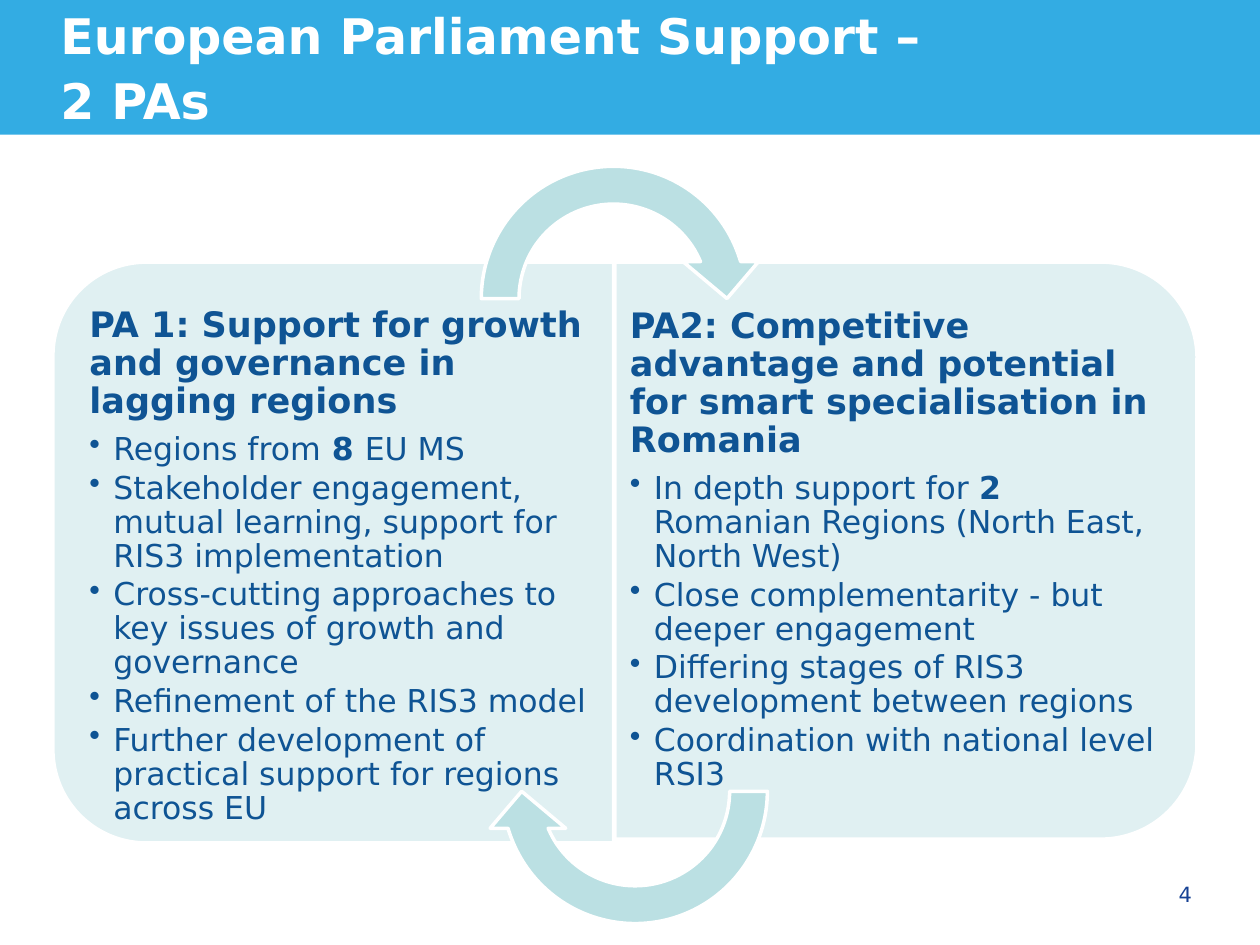
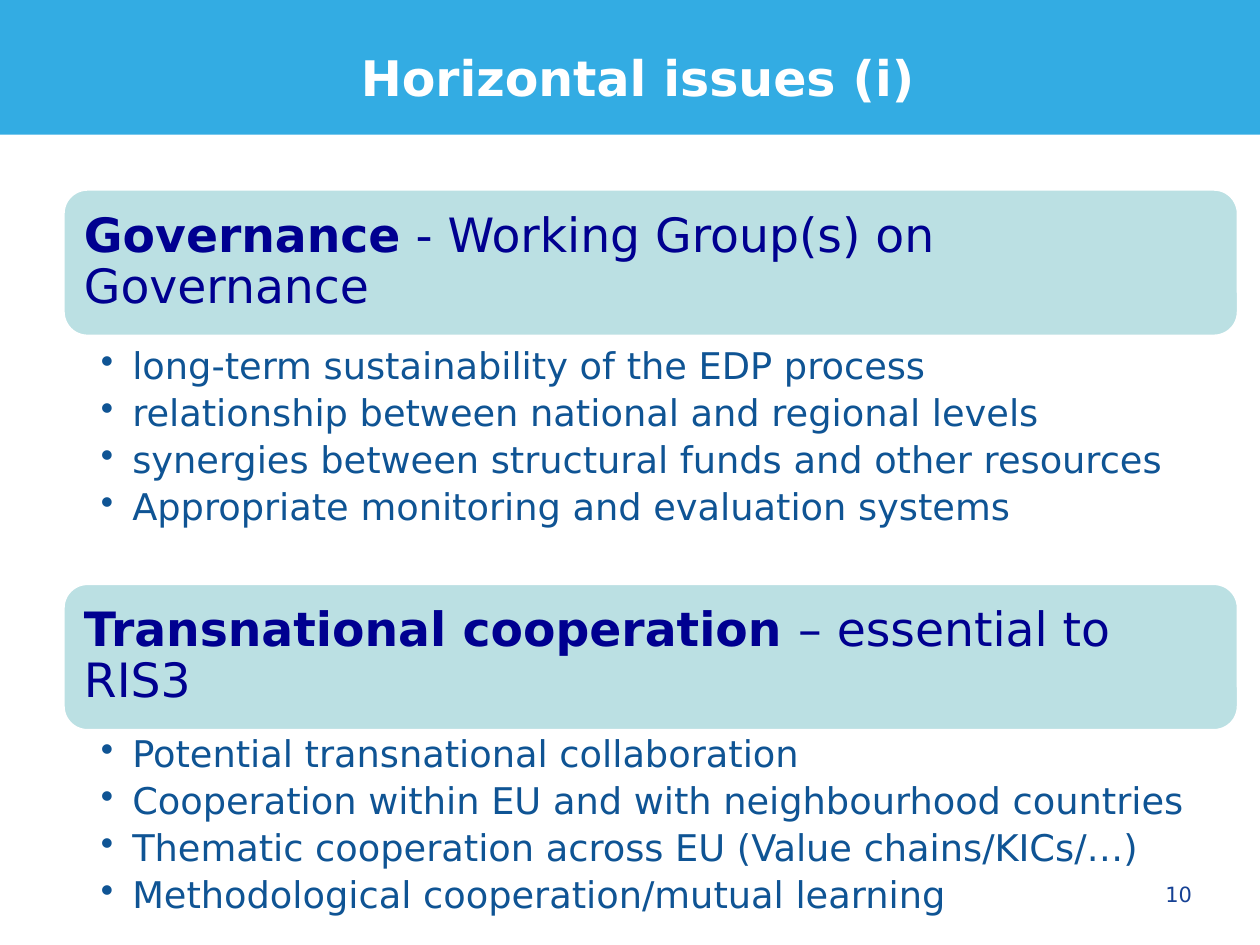
"""Build two slides on regional support priorities and horizontal issues."""
from lxml import etree
from pptx import Presentation
from pptx import util as u
from pptx.dml.color import RGBColor
from pptx.enum import shapes, text
from pptx.oxml import ns

FONT = "DejaVu Sans"
SKY = RGBColor(0x33, 0xAC, 0xE3)
TEAL = RGBColor(0xBB, 0xE0, 0xE3)
PALE = RGBColor(0xE0, 0xF0, 0xF2)
WHITE = RGBColor(0xFF, 0xFF, 0xFF)
BLUE = RGBColor(0x0F, 0x54, 0x94)
NAVY = RGBColor(0x00, 0x00, 0x90)
FOOTER = RGBColor(0x16, 0x41, 0x94)

KIND = shapes.MSO_SHAPE
TOP, MIDDLE = text.MSO_ANCHOR.TOP, text.MSO_ANCHOR.MIDDLE
LEFT, CENTER, RIGHT = text.PP_ALIGN.LEFT, text.PP_ALIGN.CENTER, text.PP_ALIGN.RIGHT


def add_block(page, kind, area, fill, rotation=0):
    """Add a filled shape with a white outline."""
    block = page.shapes.add_shape(kind, *map(u.Inches, area))
    block.shadow.inherit = False
    block.rotation = rotation
    block.fill.solid()
    block.fill.fore_color.rgb = fill
    block.line.color.rgb = WHITE
    block.line.width = u.Pt(2)
    return block


def write(box, lines, insets, color, align=LEFT, anchor=TOP, spacing=0.9):
    """Write (text, size, space after, hanging indent) lines; asterisks enclose bold words."""
    frame = box.text_frame
    frame.word_wrap = True
    frame.auto_size = text.MSO_AUTO_SIZE.NONE
    frame.vertical_anchor = anchor
    for side, inset in zip(("left", "top", "right", "bottom"), insets):
        setattr(frame, f"margin_{side}", u.Inches(inset))
    for index, (words, size, after, indent) in enumerate(lines):
        para = frame.paragraphs[0] if index == 0 else frame.add_paragraph()
        if indent:
            properties = para._p.get_or_add_pPr()
            properties.set("marL", str(u.Inches(indent)))
            properties.set("indent", str(-u.Inches(indent)))
            etree.SubElement(properties, ns.qn("a:buChar")).set("char", "•")
        layout_values = {"alignment": align, "line_spacing": spacing,
                         "space_before": u.Pt(0), "space_after": u.Pt(after)}
        for name, value in layout_values.items():
            setattr(para, name, value)
        for part, piece in enumerate(words.split("*")):
            for row, phrase in enumerate(piece.split("\n")):
                if row:
                    para.add_line_break()
                if phrase:
                    span = para.add_run()
                    span.text = phrase
                    for name, value in {"name": FONT, "size": u.Pt(size), "bold": part % 2 == 1}.items():
                        setattr(span.font, name, value)
                    span.font.color.rgb = color


deck = Presentation()
deck.slide_width, deck.slide_height = u.Inches(10), u.Inches(7.5)
layout = deck.slide_layouts[5]

headings = [
    ("*European Parliament Support – \n2 PAs*", (0.48, 0, 8.96, 1.01), LEFT, "4"),
    ("*Horizontal issues (i)*", (0.58, 0.33, 8.96, 0.5), CENTER, "10"),
]
pages = []
for heading, area, align, number in headings:
    page = deck.slides.add_slide(layout)
    title = page.shapes.title
    for name, value in zip(("left", "top", "width", "height"), area):
        setattr(title, name, u.Inches(value))
    write(title, [(heading, 28, 0, 0)], (0, 0, 0, 0), WHITE, align, spacing=1.1)
    box = page.shapes.add_textbox(*map(u.Inches, (7.23, 6.9, 2.33, 0.4)))
    write(box, [(number, 12, 0, 0)], (0.1, 0, 0.1, 0), FOOTER, RIGHT, MIDDLE, 1.0)
    pages.append(page)
priorities, issues = pages

band = add_block(priorities, KIND.RECTANGLE, (0, 0, 10, 1.07), SKY)
band.line.fill.background()
layout.shapes._spTree.insert(2, band._element)

panels = [
    ((0.34, 2.16, 4.61, 4.45), 270, (0.63, 2.3, 4.23, 4.17), (0.08, 0.14, 0.12, 0.14),
     "*PA 1: Support for growth and governance in lagging regions*",
     ["Regions from* 8 *EU MS",
      "Stakeholder engagement, mutual learning, support for RIS3 implementation",
      "Cross-cutting approaches to key issues of growth and governance",
      "Refinement of the RIS3 model",
      "Further development of practical support for regions across EU"]),
    ((4.9, 2.06, 4.58, 4.62), 90, (4.88, 2.31, 4.4, 4.14), (0.12, 0.14, 0.08, 0.14),
     "*PA2: Competitive advantage and potential for smart specialisation in Romania*",
     ["In depth support for *2* Romanian Regions (North East, North West)",
      "Close complementarity - but deeper engagement",
      "Differing stages of RIS3 development between regions",
      "Coordination with national level RSI3"]),
]
for area, rotation, text_area, insets, heading, points in panels:
    add_block(priorities, KIND.ROUND_2_SAME_RECTANGLE, area, PALE, rotation)
    box = priorities.shapes.add_textbox(*map(u.Inches, text_area))
    lines = [(heading, 20, 7, 0)] + [(point, 18, 2.7, 0.19) for point in points]
    write(box, lines, insets, BLUE)

for left, top, rotation in [(3.67, 1.17, 0), (3.84, 5.08, 180)]:
    add_block(priorities, KIND.CIRCULAR_ARROW, (left, top, 2.4, 2.4), TEAL, rotation)

topics = [
    (1.5, 2.72, 1.91, "*Governance* - Working Group(s) on Governance",
     ["long-term sustainability of the EDP process",
      "relationship between national and regional levels",
      "synergies between structural funds and other resources",
      "Appropriate monitoring and evaluation systems"]),
    (4.63, 5.8, 1.59, "*Transnational cooperation *– essential to RIS3",
     ["Potential transnational collaboration",
      "Cooperation within EU and with neighbourhood countries",
      "Thematic cooperation across EU (Value chains/KICs/…)",
      "Methodological cooperation/mutual learning"]),
]
for top, list_top, list_height, heading, points in topics:
    block = add_block(issues, KIND.ROUNDED_RECTANGLE, (0.5, top, 9.33, 1.17), TEAL)
    write(block, [(heading, 27, 0, 0)], (0.11, 0.11, 0.11, 0.11), NAVY, LEFT, MIDDLE)
    box = issues.shapes.add_textbox(*map(u.Inches, (0.5, list_top, 9.33, list_height)))
    write(box, [(point, 21, 4.2, 0.25) for point in points], (0.3, 0.04, 0.21, 0.04), BLUE)

deck.save("out.pptx")
